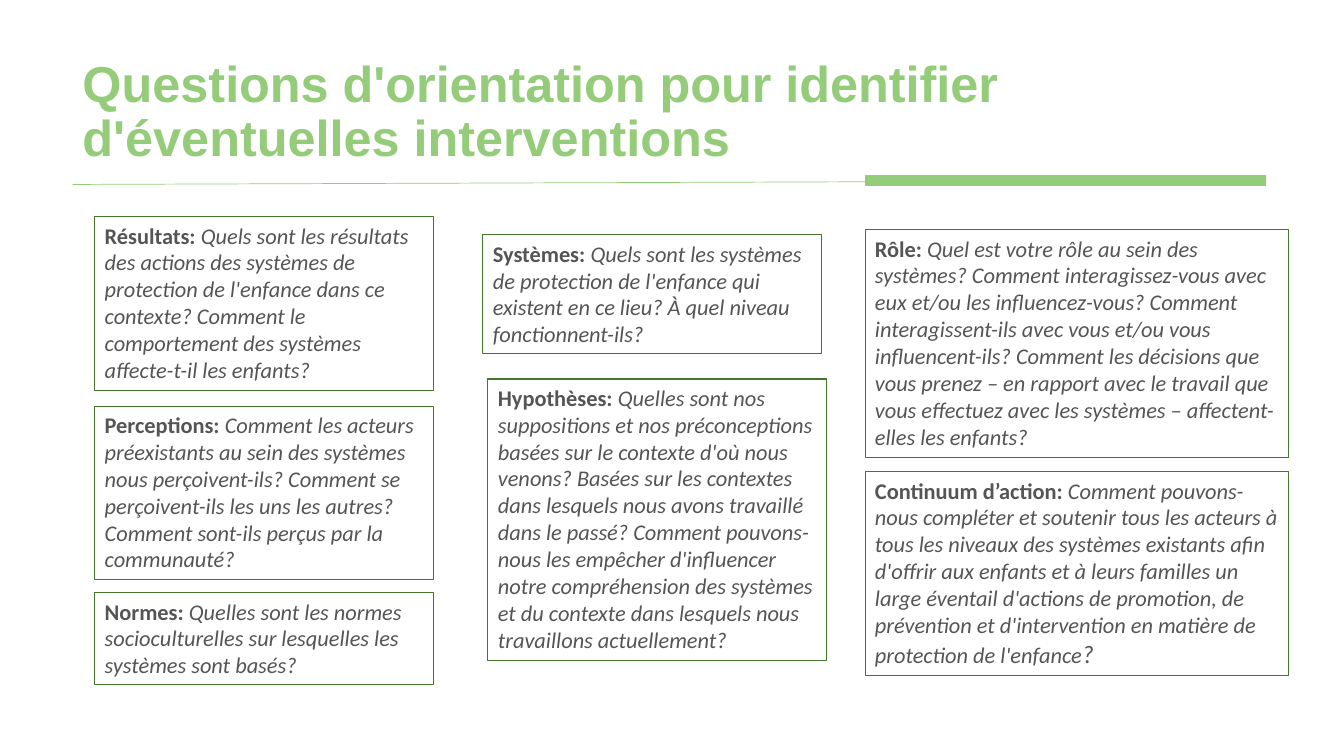
from lxml import etree
from pptx import Presentation
from pptx.dml.color import RGBColor
from pptx.enum.shapes import MSO_CONNECTOR, MSO_SHAPE
from pptx.enum.text import MSO_ANCHOR, MSO_AUTO_SIZE, PP_ALIGN
from pptx.oxml.ns import qn
from pptx.util import Emu, Pt

PX = 9144
LIGHT_GREEN = RGBColor(0x94, 0xCC, 0x7A)
DARK_GREEN = RGBColor(0x44, 0x76, 0x2D)
GREY = RGBColor(0x54, 0x55, 0x54)

COLUMNS = [
    (336, [
        (94, 215, 172, "Résultats: ",
         "Quels sont les résultats des actions des systèmes de protection de "
         "l'enfance dans ce contexte? Comment le comportement des systèmes "
         "affecte-t-il les enfants?", ""),
        (94, 403, 172, "Perceptions: ",
         "Comment les acteurs préexistants au sein des systèmes nous "
         "perçoivent-ils? Comment se perçoivent-ils les uns les autres? "
         "Comment sont-ils perçus par la communauté?", ""),
        (94, 588, 91, "Normes: ",
         "Quelles sont les normes socioculturelles sur lesquelles les "
         "systèmes sont basés?", ""),
    ]),
    (336, [
        (479, 233, 118, "Systèmes: ",
         "Quels sont les systèmes de protection de l'enfance qui existent en "
         "ce lieu? À quel niveau fonctionnent-ils?", ""),
        (484, 376, 279, "Hypothèses: ",
         "Quelles sont nos suppositions et nos préconceptions basées sur le "
         "contexte d'où nous venons? Basées sur les contextes dans lesquels "
         "nous avons travaillé dans le passé? Comment pouvons-nous les "
         "empêcher d'influencer notre compréhension des systèmes et du "
         "contexte dans lesquels nous travaillons actuellement?", ""),
    ]),
    (420, [
        (858, 228, 226, "Rôle: ",
         "Quel est votre rôle au sein des systèmes? Comment interagissez-vous "
         "avec eux et/ou les influencez-vous? Comment interagissent-ils avec "
         "vous et/ou vous influencent-ils? Comment les décisions que vous "
         "prenez – en rapport avec le travail que vous effectuez avec les "
         "systèmes – affectent-elles les enfants?", ""),
        (858, 468, 202, "Continuum d’action: ",
         "Comment pouvons-nous compléter et soutenir tous les acteurs à tous "
         "les niveaux des systèmes existants afin d'offrir aux enfants et à "
         "leurs familles un large éventail d'actions de promotion, de "
         "prévention et d'intervention en matière de protection de l'enfance",
         "?"),
    ]),
]


def px(*lengths):
    return [Emu(n * PX) for n in lengths]


def add_run(p, text, size=16, font="Calibri", color=GREY, bold=False, italic=False):
    r = p.add_run()
    r.text = text
    r.font.size = Pt(size)
    r.font.name = font
    r.font.color.rgb = color
    r.font.bold = bold
    r.font.italic = italic


def add_title(s, text):
    tf = s.shapes.add_textbox(*px(72, 40, 1150, 145)).text_frame
    tf.word_wrap = True
    tf.vertical_anchor = MSO_ANCHOR.MIDDLE
    p = tf.paragraphs[0]
    p.line_spacing = 0.9
    add_run(p, text, size=36, font="Arial", color=LIGHT_GREEN, bold=True)


def add_rect(s, x, y, w, h, line, width, fill=None):
    sp = s.shapes.add_shape(MSO_SHAPE.RECTANGLE, *px(x, y, w, h))
    sp.shadow.inherit = False
    if fill is None:
        sp.fill.background()
    else:
        sp.fill.solid()
        sp.fill.fore_color.rgb = fill
    sp.line.color.rgb = line
    sp.line.width = Pt(width)
    return sp


def add_rule(s):
    line = s.shapes.add_connector(MSO_CONNECTOR.STRAIGHT, *px(72, 183, 1255, 179))
    line.line.color.rgb = LIGHT_GREEN
    line.line.width = Pt(0.5)
    etree.SubElement(line._element.spPr, qn("a:effectLst"))
    add_rect(s, 859, 174, 396, 10, LIGHT_GREEN, 1, fill=LIGHT_GREEN)


def add_question(s, x, y, w, h, label, question, ending):
    tf = add_rect(s, x, y, w, h, DARK_GREEN, 0.75).text_frame
    tf.word_wrap = True
    tf.auto_size = MSO_AUTO_SIZE.SHAPE_TO_FIT_TEXT
    tf.vertical_anchor = MSO_ANCHOR.TOP
    p = tf.paragraphs[0]
    p.alignment = PP_ALIGN.LEFT
    add_run(p, label, bold=True)
    add_run(p, question, italic=True)
    if ending:
        add_run(p, ending, size=18, italic=True)


def main():
    prs = Presentation()
    prs.slide_width, prs.slide_height = px(1333, 750)
    s = prs.slides.add_slide(prs.slide_layouts[6])
    add_rule(s)
    add_title(s, "Questions d'orientation pour identifier d'éventuelles interventions")
    for width, questions in COLUMNS:
        for x, y, height, label, question, ending in questions:
            add_question(s, x, y, width, height, label, question, ending)
    prs.save("out.pptx")


if __name__ == "__main__":
    main()
